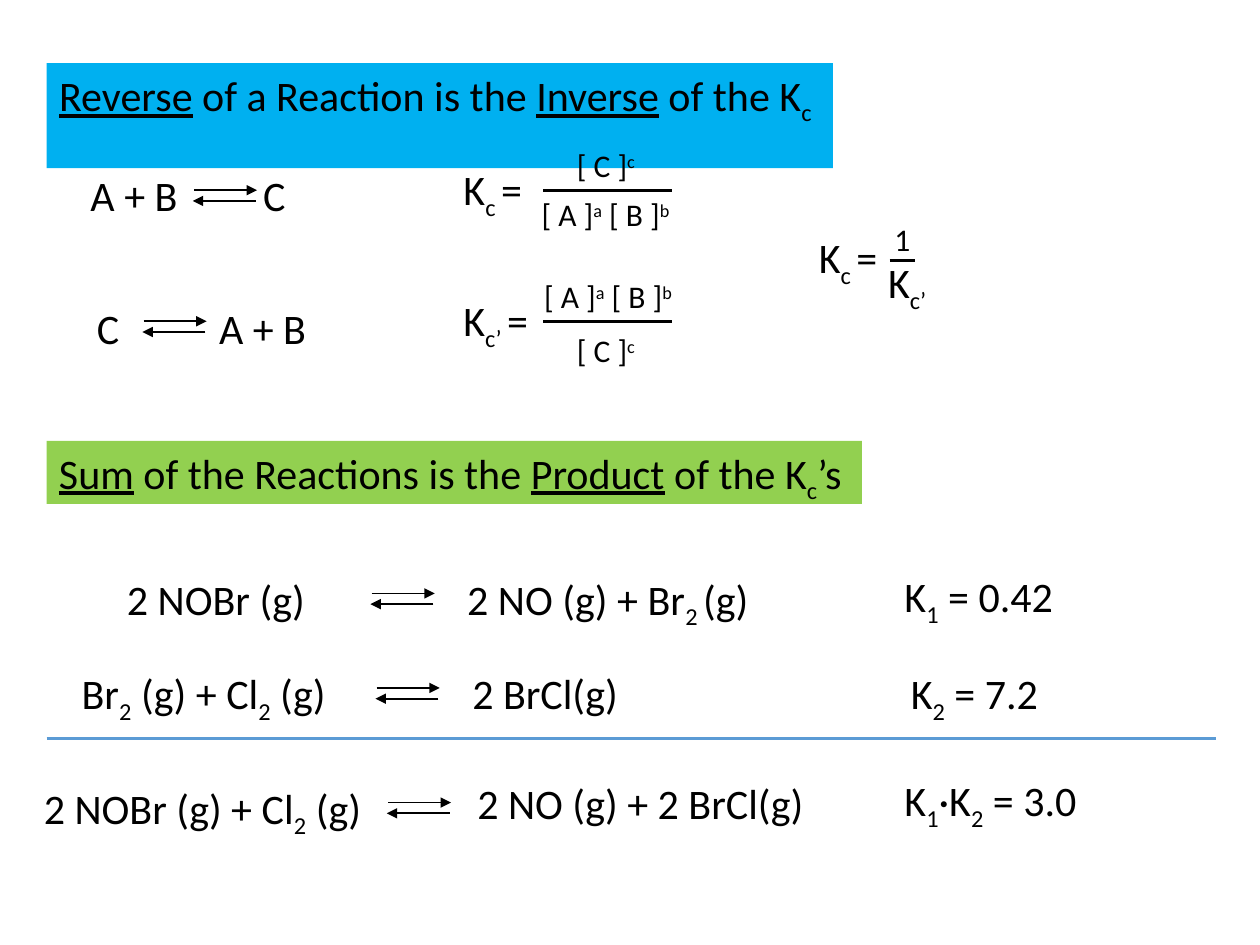
from dataclasses import dataclass

from lxml import etree
from pptx import Presentation
from pptx import util as u
from pptx.dml.color import RGBColor
from pptx.enum import shapes, text
from pptx.oxml import ns


@dataclass(frozen=True)
class Theme:
    font: str = "Calibri"
    ink: str = "000000"
    reverse: str = "00B0F0"
    total: str = "92D050"
    rule: str = "5B9BD5"
    body: int = 24
    fraction: int = 18
    arrow: float = 1
    bar: float = 1.5


THEME = Theme()
COLUMNS, ROWS = 100, 75
BODY_ROWS, FRACTION_ROWS = 5, 4
SLIDE_WIDTH, SLIDE_HEIGHT = u.Inches(10), u.Inches(7.5)


def column(count):
    return round(SLIDE_WIDTH * count / COLUMNS)


def row(count):
    return round(SLIDE_HEIGHT * count / ROWS)


def sub(words):
    return words, {"baseline": "-25000"}


def sup(words):
    return words, {"baseline": "30000"}


def under(words):
    return words, {"u": "sng"}


def write(shape, parts, size):
    frame = shape.text_frame
    frame.word_wrap = False
    frame.auto_size = text.MSO_AUTO_SIZE.SHAPE_TO_FIT_TEXT
    frame.vertical_anchor = text.MSO_ANCHOR.TOP
    paragraph = frame.paragraphs[0]
    paragraph.alignment = text.PP_ALIGN.LEFT
    for part in parts:
        words, marks = (part, {}) if isinstance(part, str) else part
        run = paragraph.add_run()
        run.text = words
        run.font.name = THEME.font
        run.font.size = u.Pt(size)
        run.font.color.rgb = RGBColor.from_string(THEME.ink)
        for name, value in marks.items():
            run.font._element.set(name, value)


def add_formula(slide, left, top, width, *parts, size=THEME.body):
    height = BODY_ROWS if size == THEME.body else FRACTION_ROWS
    shape = slide.shapes.add_textbox(column(left), row(top), column(width), row(height))
    write(shape, parts, size)


def add_heading(shape, top, width, fill, *parts):
    shape.left, shape.top = column(3.7), row(top)
    shape.width, shape.height = column(width), row(BODY_ROWS)
    shape.fill.solid()
    shape.fill.fore_color.rgb = RGBColor.from_string(fill)
    write(shape, parts, THEME.body)


def add_line(slide, start, end, top, color=THEME.ink, weight=THEME.bar, arrow=False):
    line = slide.shapes.add_connector(
        shapes.MSO_CONNECTOR.STRAIGHT, column(start), row(top), column(end), row(top)
    )
    line.line.color.rgb = RGBColor.from_string(color)
    line.line.width = u.Pt(weight)
    if arrow:
        etree.SubElement(line.line._get_or_add_ln(), ns.qn("a:tailEnd"), type="triangle")
    etree.SubElement(line._element.spPr, ns.qn("a:effectLst"))


def add_equilibrium(slide, left, top):
    add_line(slide, left, left + 5, top, weight=THEME.arrow, arrow=True)
    add_line(slide, left + 4.9, left - 0.1, top + 0.85, weight=THEME.arrow, arrow=True)


def add_fraction(slide, start, end, bar, numerator, denominator):
    add_line(slide, start, end, bar)
    for left, top, width, size, parts in (numerator, denominator):
        add_formula(slide, left, top, width, *parts, size=size)


def add_reverse_rule(slide):
    add_formula(slide, 6.2, 13, 9, "A + B")
    add_equilibrium(slide, 15.4, 15.1)
    add_formula(slide, 19.9, 13, 3.8, "C")
    add_formula(slide, 6.7, 23.5, 3.8, "C")
    add_equilibrium(slide, 11.4, 25.5)
    add_formula(slide, 16.4, 23.5, 9, "A + B")

    size = THEME.fraction
    product = ("[ C ]", sup("c"))
    reactants = ("[ A ]", sup("a"), " [ B ]", sup("b"))
    add_formula(slide, 35.8, 12.5, 7.8, "K", sub("c "), "=")
    add_fraction(slide, 43.1, 53.3, 15.1,
                 (44.8, 11.1, 6.8, size, product), (42, 15, 12.5, size, reactants))
    add_formula(slide, 35.8, 22.9, 8.3, "K", sub("c’ "), "=")
    add_fraction(slide, 43.1, 53.3, 25.5,
                 (42.2, 21.5, 12.5, size, reactants), (44.8, 25.8, 6.8, size, product))
    add_formula(slide, 64, 17.9, 7.6, "K", sub("c "), "=")
    add_fraction(slide, 70.6, 72.6, 20.7,
                 (70, 17, 3.3, size, ("1",)),
                 (69.5, 19.9, 5.2, THEME.body, ("K", sub("c’"))))


def add_sum_rule(slide):
    add_formula(slide, 9.1, 45, 17, "2 NOBr (g)")
    add_equilibrium(slide, 29.5, 47.1)
    add_formula(slide, 36.1, 45, 25.5, "2 NO (g) + Br", sub("2 "), "(g)")
    add_formula(slide, 70.8, 44.8, 14.8, "K", sub("1"), " = 0.42")

    add_formula(slide, 5.5, 52.5, 21.4, "Br", sub("2"), " (g) + Cl", sub("2"), " (g)")
    add_equilibrium(slide, 29.9, 54.6)
    add_formula(slide, 36.5, 52.5, 14.4, "2 BrCl(g)")
    add_formula(slide, 71.3, 52.5, 13.1, "K", sub("2"), " = 7.2")

    add_line(slide, 3.7, 96.5, 58.6, color=THEME.rule)
    add_formula(slide, 2.5, 61.6, 29, "2 NOBr (g) + Cl", sub("2"), " (g)")
    add_equilibrium(slide, 30.8, 63.7)
    add_formula(slide, 36.9, 61.2, 28.8, "2 NO (g) + 2 BrCl(g)")
    add_formula(slide, 70.8, 61, 16.8, "K", sub("1"), "·K", sub("2"), " = 3.0")


def main():
    presentation = Presentation()
    presentation.slide_width, presentation.slide_height = SLIDE_WIDTH, SLIDE_HEIGHT
    slide = presentation.slides.add_slide(presentation.slide_layouts.get_by_name("Title Only"))
    add_heading(slide.shapes.title, 5, 62.4, THEME.reverse,
                under("Reverse"), " of a Reaction is the ", under("Inverse"),
                " of the K", sub("c "))
    add_reverse_rule(slide)
    sum_heading = slide.shapes.add_textbox(0, 0, column(1), row(1))
    add_heading(sum_heading, 35, 64.7, THEME.total,
                under("Sum"), " of the Reactions is the ", under("Product"),
                " of the K", sub("c"), "’s ")
    add_sum_rule(slide)
    presentation.save("out.pptx")


if __name__ == "__main__":
    main()
